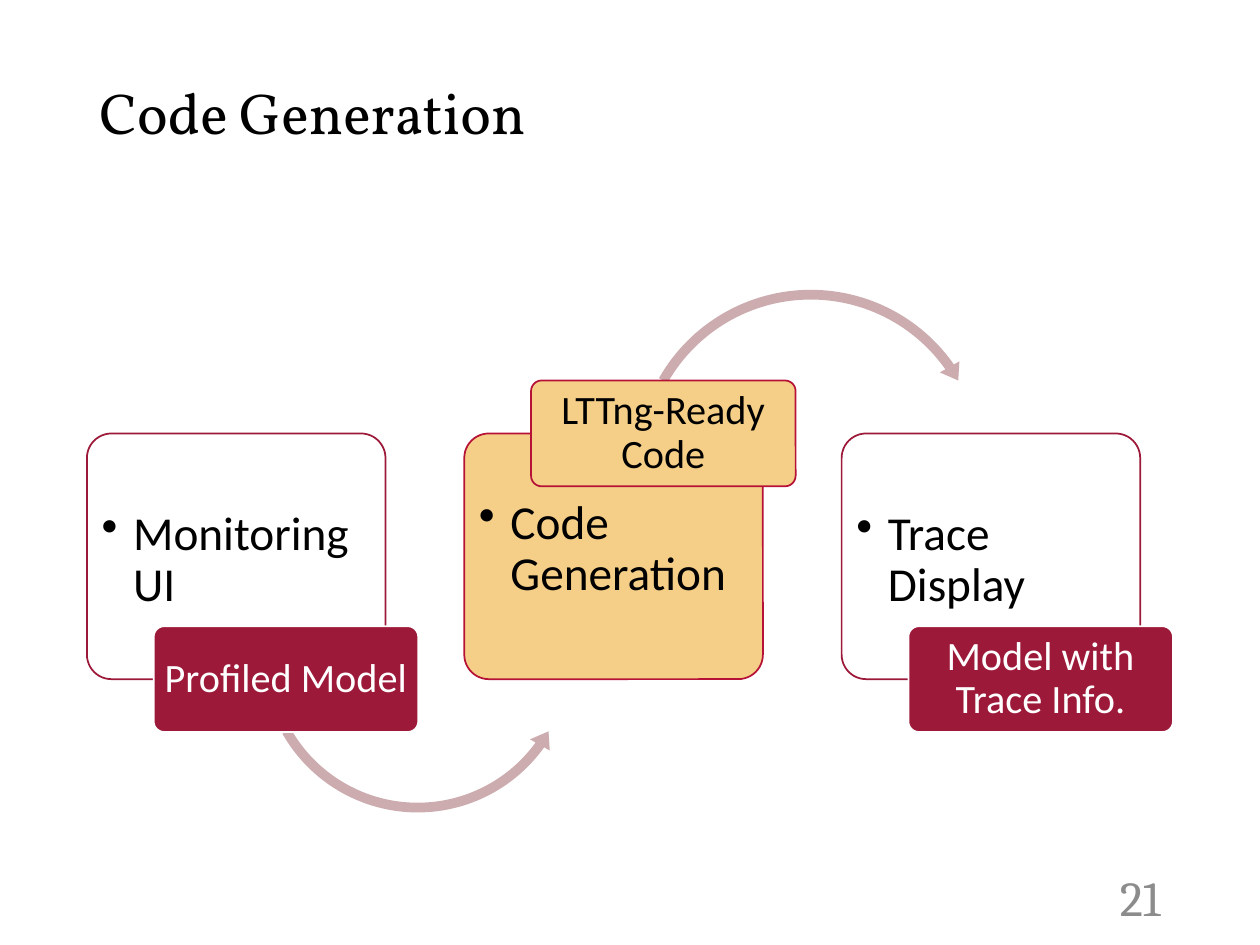
from lxml.etree import SubElement
from pptx import Presentation
from pptx.dml.color import RGBColor as RGB
from pptx.enum.shapes import MSO_SHAPE as Kind
from pptx.enum.text import MSO_ANCHOR as Anchor, PP_ALIGN as Align
from pptx.oxml.ns import qn
from pptx.util import Inches, Pt

WHITE = RGB(0xFF, 0xFF, 0xFF)
BLACK = RGB(0x00, 0x00, 0x00)
GRAY = RGB(0x8C, 0x8C, 0x8C)
WINE = RGB(0x9D, 0x19, 0x39)
RED = RGB(0xB6, 0x11, 0x36)
GOLD = RGB(0xF5, 0xCF, 0x87)
ROSE = RGB(0xCC, 0xAC, 0xAF)

LEFT, STEP = 0.69, 2.995
LOW, HIGH = 4.97, 3.02
STAGES = [
    ("Monitoring UI", "Profiled Model", LOW, 0.55, WHITE, WINE, WINE, WHITE, WHITE),
    ("Code Generation", "LTTng-Ready Code", HIGH, 0.46, GOLD, RED, GOLD, RED, BLACK),
    ("Trace Display", "Model with Trace Info.", LOW, 0.55, WHITE, WINE, WINE, WHITE, WHITE),
]
ARROWS = [
    (Kind.LEFT_CIRCULAR_ARROW, 2.03, 3.93, 2.57, (0.03, 3.678, 21.433, 90.245, 0.035)),
    (Kind.CIRCULAR_ARROW, 5, 2.25, 2.87, (0.027, 3.266, 194.979, 125.755, 0.031)),
]


def add_shape(slide, kind, box, fill, line=None, adjust=(0.1,)):
    shape = slide.shapes.add_shape(kind, *map(Inches, box))
    shape.shadow.inherit = False
    for i, value in enumerate(adjust):
        shape.adjustments[i] = value
    shape.fill.solid()
    shape.fill.fore_color.rgb = fill
    if line is None:
        shape.line.fill.background()
    else:
        shape.line.color.rgb = line
        shape.line.width = Pt(1)
    return shape


def set_text(shape, text, size, color, font="Calibri", align=Align.LEFT,
             anchor=Anchor.MIDDLE, inset=(0.1, 0.05), bullet=False):
    frame = shape.text_frame
    frame.word_wrap = True
    frame.vertical_anchor = anchor
    side, top = map(Inches, inset)
    frame.margin_left = frame.margin_right = side
    frame.margin_top = top
    frame.margin_bottom = min(top, Inches(0.06))
    para = frame.paragraphs[0]
    para.text = text
    para.alignment = align
    para.line_spacing = 0.9
    if bullet:
        props = para._p.get_or_add_pPr()
        props.set("marL", str(Inches(0.25)))
        props.set("indent", str(Inches(-0.25)))
        SubElement(props, qn("a:buChar")).set("char", "•")
    para.font.size = Pt(size)
    para.font.name = font
    para.font.color.rgb = color


def add_label(slide, box, *args, **style):
    set_text(slide.shapes.add_textbox(*map(Inches, box)), *args, **style)


def add_stage(slide, left, name, top, fill, line):
    card = add_shape(slide, Kind.ROUNDED_RECTANGLE, (left, 3.44, 2.37, 1.95), fill, line)
    set_text(card, name, 27, BLACK, anchor=Anchor.TOP, inset=(0.06, top), bullet=True)


def add_tag(slide, left, top, text, fill, line, color):
    tag = add_shape(slide, Kind.ROUNDED_RECTANGLE, (left, top, 2.1, 0.84), fill, line)
    set_text(tag, text, 23, color, align=Align.CENTER, inset=(0.05, 0.03))


def add_arrow(slide, kind, left, top, size, adjust):
    add_shape(slide, kind, (left, top, size, size), ROSE, adjust=adjust)


def main():
    deck = Presentation()
    deck.slide_width, deck.slide_height = Inches(10), Inches(7.5)
    slide = deck.slides.add_slide(deck.slide_layouts[6])
    for i, (name, tag, top, gap, fill, line, back, edge, ink) in enumerate(STAGES):
        left = LEFT + i * STEP
        add_stage(slide, left, name, gap, fill, line)
        if i < len(ARROWS):
            add_arrow(slide, *ARROWS[i])
        add_tag(slide, left + 0.53, top, tag, back, edge, ink)
    add_label(slide, (7.06, 6.95, 2.25, 0.4), "21", 28, GRAY, font="Cambria", align=Align.RIGHT)
    add_label(slide, (0.69, 0.32, 8.62, 1.2), "Code Generation", 33, BLACK, font="Vollkorn")
    deck.save("out.pptx")


if __name__ == "__main__":
    main()
